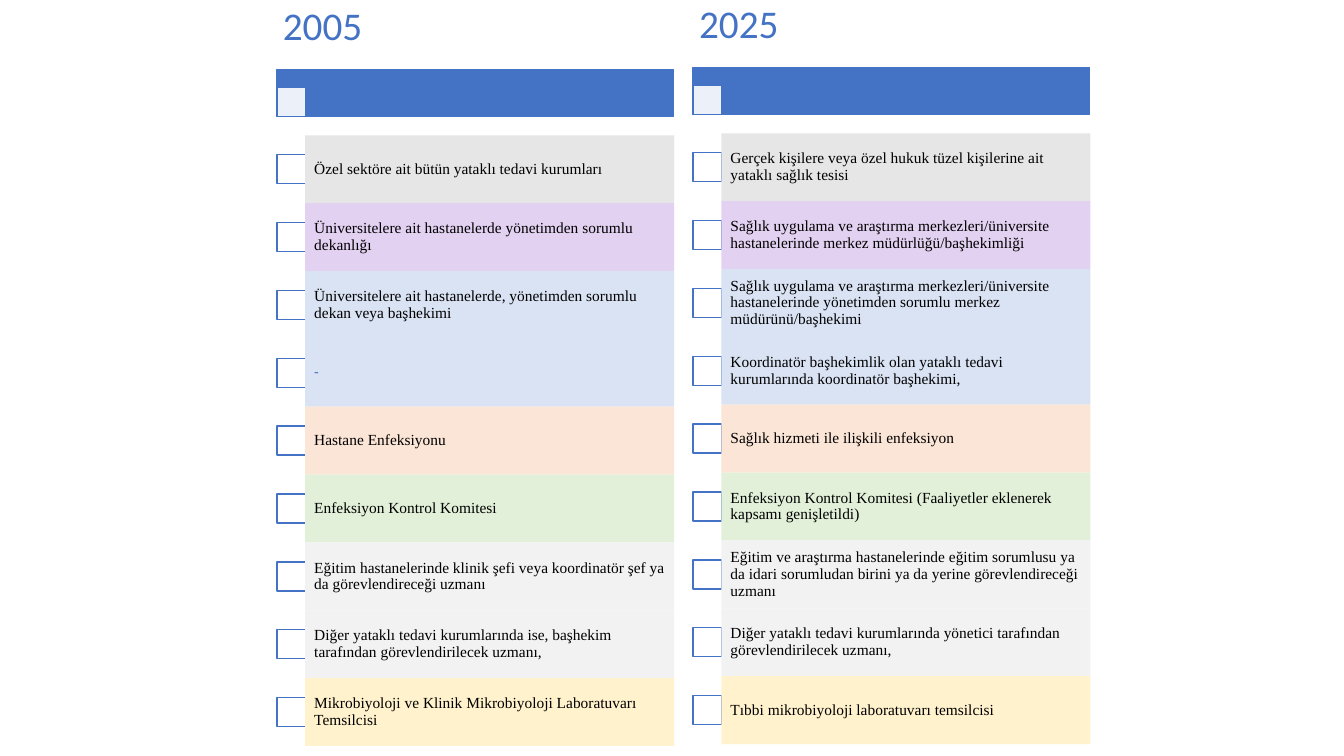
from lxml import etree
from pptx import Presentation
from pptx.dml.color import RGBColor
from pptx.enum.shapes import MSO_SHAPE
from pptx.enum.text import MSO_ANCHOR, PP_ALIGN
from pptx.oxml.ns import qn
from pptx.util import Cm, Pt

RECTANGLE = MSO_SHAPE.RECTANGLE
MIDDLE = MSO_ANCHOR.MIDDLE
LEFT = PP_ALIGN.LEFT

BLUE = RGBColor(0x44, 0x72, 0xC4)
WHITE = RGBColor(0xFF, 0xFF, 0xFF)
BLACK = RGBColor(0x00, 0x00, 0x00)
GRAY = RGBColor(0xE7, 0xE6, 0xE6)
PURPLE = RGBColor(0xE3, 0xD1, 0xF1)
PALE_BLUE = RGBColor(0xDA, 0xE3, 0xF3)
ORANGE = RGBColor(0xFB, 0xE5, 0xD6)
GREEN = RGBColor(0xE2, 0xF0, 0xD9)
PALE_GRAY = RGBColor(0xF2, 0xF2, 0xF2)
YELLOW = RGBColor(0xFF, 0xF2, 0xCC)

# Year, left edge, top of the bar, height of the title (cm)
COLUMNS = [("2005", 6.98, 1.75, 1.4), ("2025", 17.47, 1.7, 1.3)]

# Band colour, text for 2005, text for 2025
ROWS = [
    (GRAY, "Özel sektöre ait bütün yataklı tedavi kurumları",
     "Gerçek kişilere veya özel hukuk tüzel kişilerine ait yataklı sağlık tesisi"),
    (PURPLE, "Üniversitelere ait hastanelerde yönetimden sorumlu dekanlığı",
     "Sağlık uygulama ve araştırma merkezleri/üniversite hastanelerinde "
     "merkez müdürlüğü/başhekimliği"),
    (PALE_BLUE, "Üniversitelere ait hastanelerde, yönetimden sorumlu dekan veya başhekimi",
     "Sağlık uygulama ve araştırma merkezleri/üniversite hastanelerinde "
     "yönetimden sorumlu merkez müdürünü/başhekimi"),
    (PALE_BLUE, "-",
     "Koordinatör başhekimlik olan yataklı tedavi kurumlarında koordinatör başhekimi,"),
    (ORANGE, "Hastane Enfeksiyonu", "Sağlık hizmeti ile ilişkili enfeksiyon"),
    (GREEN, "Enfeksiyon Kontrol Komitesi",
     "Enfeksiyon Kontrol Komitesi (Faaliyetler eklenerek kapsamı genişletildi)"),
    (PALE_GRAY, "Eğitim hastanelerinde klinik şefi veya koordinatör "
     "şef ya da görevlendireceği uzmanı",
     "Eğitim ve araştırma hastanelerinde eğitim sorumlusu ya da idari sorumludan "
     "birini ya da yerine görevlendireceği uzmanı"),
    (PALE_GRAY, "Diğer yataklı tedavi kurumlarında ise, başhekim "
     "tarafından görevlendirilecek uzmanı,",
     "Diğer yataklı tedavi kurumlarında yönetici tarafından görevlendirilecek uzmanı,"),
    (YELLOW, "Mikrobiyoloji ve Klinik Mikrobiyoloji Laboratuvarı Temsilcisi",
     "Tıbbi mikrobiyoloji laboratuvarı temsilcisi"),
]

COLUMN_WIDTH = 9.99
BAR_HEIGHT = 1.18
BOX_SIZE = 0.73
BAND_INDENT = 0.71
BAND_WIDTH = 9.3
ROW_HEIGHT = 1.71
BAR_TO_ROWS = 1.66


def add_rectangle(slide, left, top, width, height, fill, outline=None):
    shape = slide.shapes.add_shape(RECTANGLE, Cm(left), Cm(top), Cm(width), Cm(height))
    shape.shadow.inherit = False
    shape.fill.solid()
    shape.fill.fore_color.rgb = fill
    if outline is None:
        shape.line.fill.background()
    else:
        shape.line.color.rgb = outline
        shape.line.width = Pt(1)
    return shape


def write_text(shape, text, font, size, color, side_margin, end_margin):
    frame = shape.text_frame
    frame.word_wrap = True
    frame.vertical_anchor = MIDDLE
    frame.margin_left = frame.margin_right = Cm(side_margin)
    frame.margin_top = frame.margin_bottom = Cm(end_margin)
    paragraph = frame.paragraphs[0]
    paragraph.alignment = LEFT
    paragraph.line_spacing = 0.9
    run = paragraph.add_run()
    run.text = text
    run.font.name = font
    run.font.size = Pt(size)
    run.font.color.rgb = color


def set_opacity(shape, percent):
    color = shape.fill._xPr.find(qn("a:solidFill"))[0]
    etree.SubElement(color, qn("a:alpha"), val=str(percent * 1000))


def add_column(slide, year, left, bar_top, title_height, entries):
    add_rectangle(slide, left, bar_top, COLUMN_WIDTH, BAR_HEIGHT, BLUE, BLUE)
    bar_box = add_rectangle(slide, left, bar_top + BAR_HEIGHT - BOX_SIZE,
                            BOX_SIZE, BOX_SIZE, WHITE, BLUE)
    set_opacity(bar_box, 90)
    title = slide.shapes.add_textbox(Cm(left), Cm(0), Cm(COLUMN_WIDTH), Cm(title_height))
    write_text(title, year, "Calibri", 28, BLUE, 0.15, 0.1)

    for index, (color, text) in enumerate(entries):
        top = bar_top + BAR_TO_ROWS + index * ROW_HEIGHT
        add_rectangle(slide, left, top + (ROW_HEIGHT - BOX_SIZE) / 2,
                      BOX_SIZE, BOX_SIZE, WHITE, BLUE)
        band = add_rectangle(slide, left + BAND_INDENT, top, BAND_WIDTH, ROW_HEIGHT, color)
        font, text_color = ("Calibri", BLUE) if text == "-" else ("Times New Roman", BLACK)
        write_text(band, text, font, 11, text_color, 0.23, 0.23)


def main():
    presentation = Presentation()
    presentation.slide_width = Cm(33.87)
    presentation.slide_height = Cm(19.05)
    slide = presentation.slides.add_slide(presentation.slide_layouts[6])
    for number, column in enumerate(COLUMNS, start=1):
        add_column(slide, *column, [(row[0], row[number]) for row in ROWS])
    presentation.save("out.pptx")


if __name__ == "__main__":
    main()
